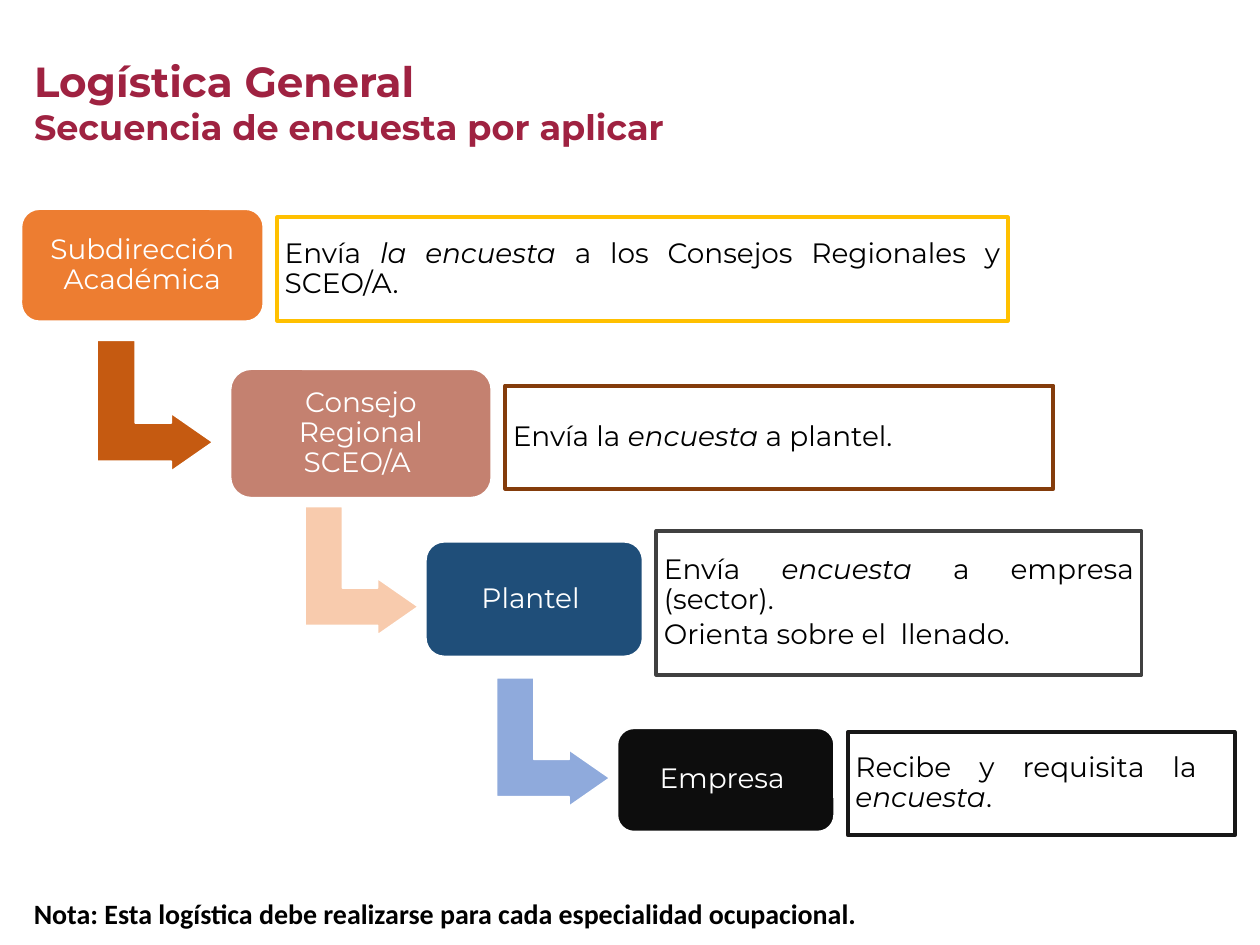
from pptx import Presentation
from pptx import util as u
from pptx.dml.color import RGBColor
from pptx.enum import shapes, text

WIDTH, HEIGHT = u.Inches(10), u.Inches(7.5)
COLUMNS, ROWS = 100, 75          # grid of the slide
FONT = "Montserrat"
COLOURS = {
    "title": "9F2241", "white": "FFFFFF", "black": "000000",
    "orange": "ED7D31", "rose": "C48170", "navy": "1F4E79", "ink": "0D0D0D",
    "gold": "FFC000", "brown": "843C0B", "grey": "404040", "coal": "181717",
    "rust": "C55A11", "peach": "F8CBAD", "sky": "8FAADC",
}
TASK_GAP, TASK_DROP = 1.1, 0.3   # columns right of a step, rows below its middle

# Each step: its box, label, fill and space after the label; then its task's
# size, line colour, right margin in inches and paragraphs of (words, italic)
STEPS = [
    ((1.7, 16.6, 19.2, 8.9), "Subdirección Académica", "orange", 5.6,
     (58, 8.2), "gold", 0.06,
     [[("Envía ", False), ("la encuesta ", True),
       ("a los Consejos Regionales y SCEO/A.", False)]]),
    ((18.3, 29.3, 20.7, 10.2), "Consejo Regional SCEO/A ", "rose", 0,
     (43.5, 8.2), "brown", 0.06,
     [[("Envía la ", False), ("encuesta", True), (" a plantel.", False)]]),
    ((33.8, 43, 17.2, 9.1), "Plantel ", "navy", 5.6,
     (38.5, 11.4), "grey", 0.06,
     [[("Envía ", False), ("encuesta", True), (" a empresa (sector). ", False)],
      [("Orienta sobre el  llenado. ", False)]]),
    ((49, 57.8, 17.2, 8.2), "Empresa ", "ink", 5.6,
     (30.7, 8.2), "coal", 0.3,
     [[("Recibe y requisita la ", False), ("encuesta", True), (". ", False)]]),
]
ARROWS = [
    ((7.1, 27.6, 10.4, 9.2), "rust"),
    ((23.6, 40.8, 10.2, 9), "peach"),
    ((38.8, 54.4, 10.2, 9), "sky"),
]


def colour(name):
    return RGBColor.from_string(COLOURS[name])


def on_grid(box):
    left, top, width, height = box
    return [round(share) for share in (
        left * WIDTH / COLUMNS, top * HEIGHT / ROWS,
        width * WIDTH / COLUMNS, height * HEIGHT / ROWS)]


def add_span(para, words, size, shade, font=FONT, bold=False, italic=False):
    span = para.add_run()
    span.text = words
    span.font.name, span.font.size = font, u.Pt(size)
    span.font.bold, span.font.italic = bold, italic
    span.font.color.rgb = colour(shade)


def add_block(page, kind, box, fill, line, weight):
    block = page.shapes.add_shape(kind, *on_grid(box))
    block.shadow.inherit = False
    if fill:
        block.fill.solid()
        block.fill.fore_color.rgb = colour(fill)
    else:
        block.fill.background()
    block.line.color.rgb = colour(line)
    block.line.width = u.Pt(weight)
    return block


def fill_block(block, paragraphs, shade, align, after, margin, right):
    frame = block.text_frame
    frame.word_wrap = True
    frame.vertical_anchor = text.MSO_ANCHOR.MIDDLE
    frame.margin_left = frame.margin_top = frame.margin_bottom = u.Inches(margin)
    frame.margin_right = u.Inches(right)
    for index, spans in enumerate(paragraphs):
        para = frame.add_paragraph() if index else frame.paragraphs[0]
        para.alignment, para.line_spacing = align, 0.9
        para.space_after = u.Pt(after)
        for words, italic in spans:
            add_span(para, words, 16, shade, italic=italic)


def add_title(page, box):
    title = page.shapes.title
    title.left, title.top, title.width, title.height = on_grid(box)
    frame = title.text_frame
    frame.word_wrap = True
    frame.auto_size = text.MSO_AUTO_SIZE.NONE
    frame.vertical_anchor = text.MSO_ANCHOR.TOP
    lines = [("Logística General", 24), ("Secuencia de encuesta por aplicar", 20)]
    for index, (words, size) in enumerate(lines):
        para = frame.add_paragraph() if index else frame.paragraphs[0]
        para.alignment = text.PP_ALIGN.LEFT
        add_span(para, words, size, "title", bold=True)


def add_arrow(page, box, fill):
    arrow = add_block(page, shapes.MSO_SHAPE.BENT_UP_ARROW, box, fill, "white", 1)
    arrow.rotation = 90
    for index, share in enumerate((0.33, 0.25, 0.36)):
        arrow.adjustments[index] = share


def add_step(page, box, label, fill, after, task_size, line, right, paragraphs):
    # Coloured step
    step = add_block(page, shapes.MSO_SHAPE.ROUNDED_RECTANGLE, box, fill, "white", 1)
    step.adjustments[0] = 0.16
    fill_block(step, [[(label, False)]], "white", text.PP_ALIGN.CENTER,
               after, 0.05, 0.05)
    # Outlined task beside it
    left, top, width, height = box
    task_box = (left + width + TASK_GAP,
                top + (height - task_size[1]) / 2 + TASK_DROP, *task_size)
    task = add_block(page, shapes.MSO_SHAPE.RECTANGLE, task_box, None, line, 2.25)
    fill_block(task, paragraphs, "black", text.PP_ALIGN.JUSTIFY, 2.4, 0.06, right)


def add_note(page, box):
    frame = page.shapes.add_textbox(*on_grid(box)).text_frame
    frame.word_wrap = True
    add_span(frame.paragraphs[0],
             "Nota: Esta logística debe realizarse para cada especialidad ocupacional.",
             16, "black", font="Calibri", bold=True)


def main():
    deck = Presentation()
    deck.slide_width, deck.slide_height = WIDTH, HEIGHT
    page = deck.slides.add_slide(deck.slide_layouts[5])
    add_title(page, (1.7, 3.9, 56, 8.4))
    for box, fill in ARROWS:
        add_arrow(page, box, fill)
    for step in STEPS:
        add_step(page, *step)
    add_note(page, (1.7, 70.7, 88.9, 3.7))
    deck.save("out.pptx")


if __name__ == "__main__":
    main()
